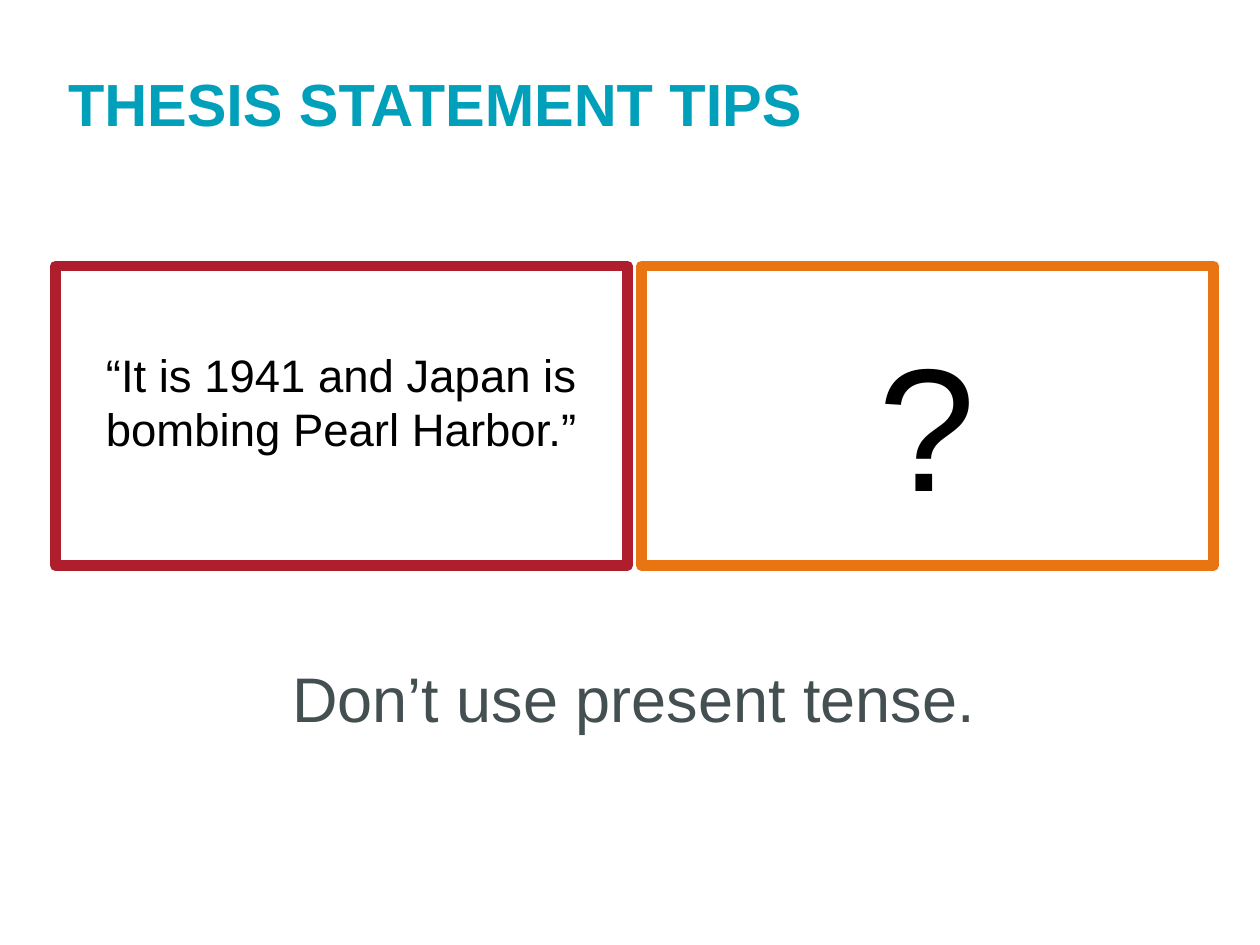
from collections import namedtuple
from dataclasses import dataclass

from lxml.etree import SubElement
from pptx import Presentation
from pptx.dml.color import RGBColor
from pptx.enum.shapes import MSO_SHAPE
from pptx.enum.text import MSO_ANCHOR, MSO_AUTO_SIZE, PP_ALIGN
from pptx.oxml.ns import qn
from pptx.util import Inches, Pt

Box = namedtuple("Box", "left top width height")


@dataclass(frozen=True)
class Theme:
    font: str = "Arial"
    title: str = "00A0BA"
    text: str = "000000"
    tip: str = "444F51"
    wrong: str = "AF1E2D"
    answer: str = "E87511"
    title_size: int = 34
    quote_size: int = 26
    question_size: int = 100
    tip_size: int = 36
    border: int = 6


THEME = Theme()
SLIDE = Box(0, 0, 10, 7.5)
CONTENT = Box(0.44, 2.11, 9.19, 2.38)
PANEL_GAP = 0.11


def apply(target, values):
    for name, value in values.items():
        setattr(target, name, value)


def place(shape, box):
    apply(shape, {name: Inches(value) for name, value in box._asdict().items()})


def write(shape, text, size, color, align, inset_top, bold=False):
    """Put one formatted paragraph at the top of a shape."""
    frame = shape.text_frame
    apply(frame, {
        "word_wrap": True, "auto_size": MSO_AUTO_SIZE.NONE,
        "vertical_anchor": MSO_ANCHOR.TOP,
        "margin_left": Inches(0.1), "margin_right": Inches(0.1),
        "margin_top": Inches(inset_top), "margin_bottom": Inches(0.05),
    })
    paragraph = frame.paragraphs[0]
    apply(paragraph, {"alignment": align, "space_before": Pt(0)})
    run = paragraph.add_run()
    run.text = text
    apply(run.font, {"name": THEME.font, "size": Pt(size), "bold": bold})
    run.font.color.rgb = RGBColor.from_string(color)


def add_title(slide, box, text):
    title = slide.shapes.title
    place(title, box)
    write(title, text, THEME.title_size, THEME.title, PP_ALIGN.LEFT, 0.1, bold=True)


def add_panel(slide, box, border, text, size, text_top):
    """Draw a bordered panel; text_top is a share of its height."""
    panel = slide.shapes.add_shape(
        MSO_SHAPE.RECTANGLE, *(Inches(value) for value in box))
    panel.shadow.inherit = False
    panel.fill.background()
    panel.line.color.rgb = RGBColor.from_string(border)
    panel.line.width = Pt(THEME.border)
    SubElement(panel.line._get_or_add_ln(), qn("a:round"))
    write(panel, text, size, THEME.text, PP_ALIGN.CENTER, box.height * text_top)


def add_panels(slide, box, panels):
    """Share the box equally among the panels, side by side."""
    width = (box.width - PANEL_GAP * (len(panels) - 1)) / len(panels)
    for column, panel in enumerate(panels):
        left = box.left + column * (width + PANEL_GAP)
        add_panel(slide, box._replace(left=left, width=width), *panel)


def add_tip(slide, box, text):
    tip = slide.shapes.add_textbox(*(Inches(value) for value in box))
    write(tip, text, THEME.tip_size, THEME.tip, PP_ALIGN.CENTER, 0.09)


def main():
    presentation = Presentation()
    presentation.slide_width = Inches(SLIDE.width)
    presentation.slide_height = Inches(SLIDE.height)
    slide = presentation.slides.add_slide(presentation.slide_layouts[5])

    # Heading
    add_title(slide, Box(CONTENT.left, 0.43, CONTENT.width, 0.74),
              "THESIS STATEMENT TIPS")
    # Weak example beside the open question
    add_panels(slide, CONTENT, [
        (THEME.wrong, "“It is 1941 and Japan is bombing Pearl Harbor.”",
         THEME.quote_size, 0.27),
        (THEME.answer, "?", THEME.question_size, 0.17),
    ])
    # Advice below the panels
    add_tip(slide, Box(0.59, 5.14, 8.88, 0.85), "Don’t use present tense.")

    presentation.save("out.pptx")


if __name__ == "__main__":
    main()
